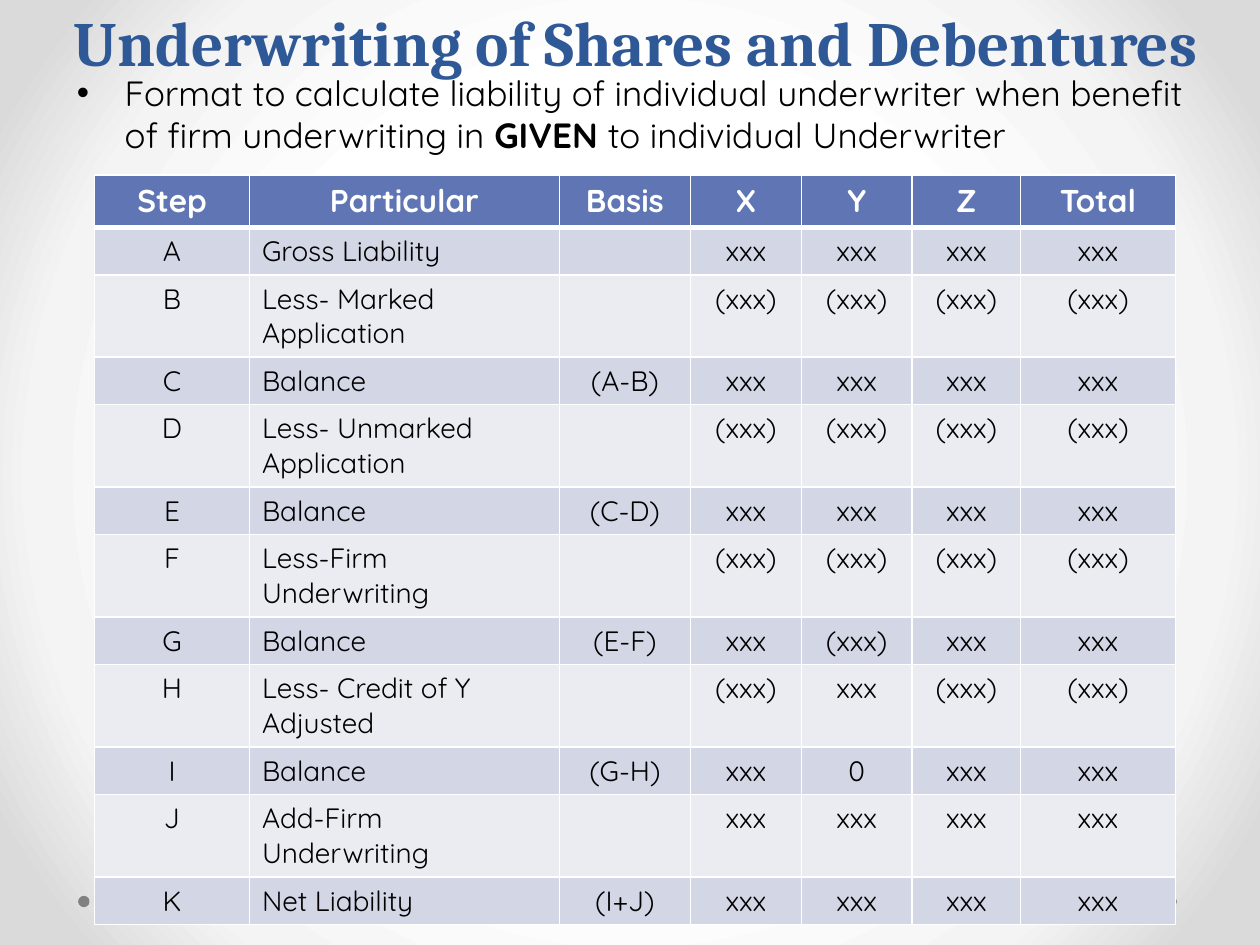
import pptx
import pptx.dml.color
import pptx.enum.shapes
import pptx.enum.text
import pptx.oxml
import pptx.oxml.ns
import pptx.util
from lxml import etree

Inches = pptx.util.Inches
Pt = pptx.util.Pt
ALIGN = pptx.enum.text.PP_ALIGN
ANCHOR = pptx.enum.text.MSO_ANCHOR
qn = pptx.oxml.ns.qn

HUES = {
    "title": "2F5897",
    "text": "000000",
    "white": "FFFFFF",
    "head": "6076B4",
    "dark": "D2D6E5",
    "light": "EAECF2",
    "dot": "808080",
}
GLOW = [(50, "FFFFFF"), (76, "F4F4F4"), (92, "DADADA")]
FONT = "Quicksand"

WIDTHS = [1.23, 2.46, 1.04, 0.88, 0.88, 0.86, 1.23]
SHORT, TALL = 0.37, 0.64
HEAD = ["Step", "Particular", "Basis", "X", "Y", "Z", "Total"]
PLUS, LESS = "xxx", "(xxx)"
# Particular, basis, then X, Y, Z and total
STEPS = [
    ("Gross Liability", "", [PLUS] * 4),
    ("Less- Marked Application", "", [LESS] * 4),
    ("Balance", "(A-B)", [PLUS] * 4),
    ("Less- Unmarked Application", "", [LESS] * 4),
    ("Balance", "(C-D)", [PLUS] * 4),
    ("Less-Firm Underwriting", "", [LESS] * 4),
    ("Balance", "(E-F)", [PLUS, LESS, PLUS, PLUS]),
    ("Less- Credit of Y Adjusted", "", [LESS, PLUS, LESS, LESS]),
    ("Balance", "(G-H)", [PLUS, "0", PLUS, PLUS]),
    ("Add-Firm Underwriting", "", [PLUS] * 4),
    ("Net Liability", "(I+J)", [PLUS] * 4),
]


def tint(name):
    return pptx.dml.color.RGBColor.from_string(HUES[name])


def place(shape, left, top, width, height):
    shape.left, shape.top = Inches(left), Inches(top)
    shape.width, shape.height = Inches(width), Inches(height)


def add_run(para, text, size, hue, bold=False, face=FONT):
    run = para.add_run()
    run.text = text
    run.font.size = Pt(size)
    run.font.name = face
    run.font.bold = bold
    run.font.color.rgb = tint(hue)


def paint_back(slide):
    slide.background.fill.solid()
    stops = "".join(
        f'<a:gs pos="{pos * 1000}"><a:srgbClr val="{hue}"/></a:gs>'
        for pos, hue in GLOW
    )
    grad = pptx.oxml.parse_xml(
        f'<a:gradFill {pptx.oxml.ns.nsdecls("a")} rotWithShape="1">'
        f"<a:gsLst>{stops}</a:gsLst>"
        '<a:path path="circle">'
        '<a:fillToRect l="50000" t="50000" r="50000" b="50000"/>'
        "</a:path></a:gradFill>"
    )
    solid = slide.element.xpath("p:cSld/p:bg/p:bgPr/a:solidFill")[0]
    solid.getparent().replace(solid, grad)


def add_dot(slide, left):
    dot = slide.shapes.add_shape(
        pptx.enum.shapes.MSO_SHAPE.OVAL,
        Inches(left), Inches(7.11), Inches(0.09), Inches(0.09),
    )
    dot.shadow.inherit = False
    dot.fill.solid()
    dot.fill.fore_color.rgb = tint("dot")
    dot.line.fill.background()


def set_title(slide):
    title = slide.shapes.title
    place(title, 0.28, -0.11, 9.53, 0.79)
    frame = title.text_frame
    frame.auto_size = pptx.enum.text.MSO_AUTO_SIZE.NONE
    frame.vertical_anchor = ANCHOR.BOTTOM
    para = frame.paragraphs[0]
    para.alignment = ALIGN.CENTER
    para.line_spacing = Pt(58)
    add_run(para, "Underwriting of Shares and Debentures", 36, "title",
            True, "Cambria")


def set_body(slide):
    body = slide.placeholders[1]
    place(body, 0.51, 0.52, 9, 5.78)
    frame = body.text_frame
    frame.auto_size = pptx.enum.text.MSO_AUTO_SIZE.NONE
    para = frame.paragraphs[0]
    props = para._p.get_or_add_pPr()
    props.set("marL", str(Inches(0.38)))
    props.set("indent", str(-Inches(0.38)))
    etree.SubElement(props, qn("a:buFont")).set("typeface", "Arial")
    etree.SubElement(props, qn("a:buChar")).set("char", "•")
    add_run(para, "Format to calculate liability of individual underwriter "
            "when benefit of firm underwriting in ", 20, "text")
    add_run(para, "GIVEN ", 20, "text", True)
    add_run(para, "to individual Underwriter", 20, "text")


def add_edge(cell, side, width):
    line = etree.SubElement(cell._tc.get_or_add_tcPr(), qn(f"a:ln{side}"))
    line.set("w", str(Pt(width)))
    fill = etree.SubElement(line, qn("a:solidFill"))
    etree.SubElement(fill, qn("a:srgbClr")).set("val", HUES["white"])


def fill_cell(cell, text, size, hue, back, centre, top, base):
    for side, width in zip("LRTB", (1, 1, top, base)):
        add_edge(cell, side, width)
    cell.fill.solid()
    cell.fill.fore_color.rgb = tint(back)
    para = cell.text_frame.paragraphs[0]
    para.alignment = ALIGN.CENTER if centre else ALIGN.LEFT
    if text:
        add_run(para, text, size, hue, hue == "white")
    else:
        # Keeps a blank cell from growing its row
        end = etree.SubElement(para._p, qn("a:endParaRPr"))
        end.set("sz", str(size * 100))


def add_grid(slide):
    rows = [HEAD] + [
        [chr(ord("A") + i), name, basis, *sums]
        for i, (name, basis, sums) in enumerate(STEPS)
    ]
    heights = [0.39] + [TALL if i % 2 else SHORT for i in range(len(STEPS))]
    table = slide.shapes.add_table(
        len(rows), len(HEAD), Inches(0.75), Inches(1.39),
        Inches(sum(WIDTHS)), Inches(sum(heights)),
    ).table
    for col, width in zip(table.columns, WIDTHS):
        col.width = Inches(width)
    for r, (row, height) in enumerate(zip(rows, heights)):
        table.rows[r].height = Inches(height)
        if r == 0:
            size, hue, back = 18, "white", "head"
        else:
            size, hue, back = 16, "text", "dark" if r % 2 else "light"
        top, base = 3 if r == 1 else 1, 3 if r == 0 else 1
        for c, text in enumerate(row):
            fill_cell(table.cell(r, c), text, size, hue, back,
                      r == 0 or c != 1, top, base)


def main():
    deck = pptx.Presentation()
    deck.slide_width, deck.slide_height = Inches(10), Inches(7.5)
    slide = deck.slides.add_slide(deck.slide_layouts[1])
    paint_back(slide)
    # Heading and lead text
    set_title(slide)
    set_body(slide)
    # Corner dots lie under the table
    for left in (9.25, 0.62):
        add_dot(slide, left)
    add_grid(slide)
    deck.save("out.pptx")


if __name__ == "__main__":
    main()
